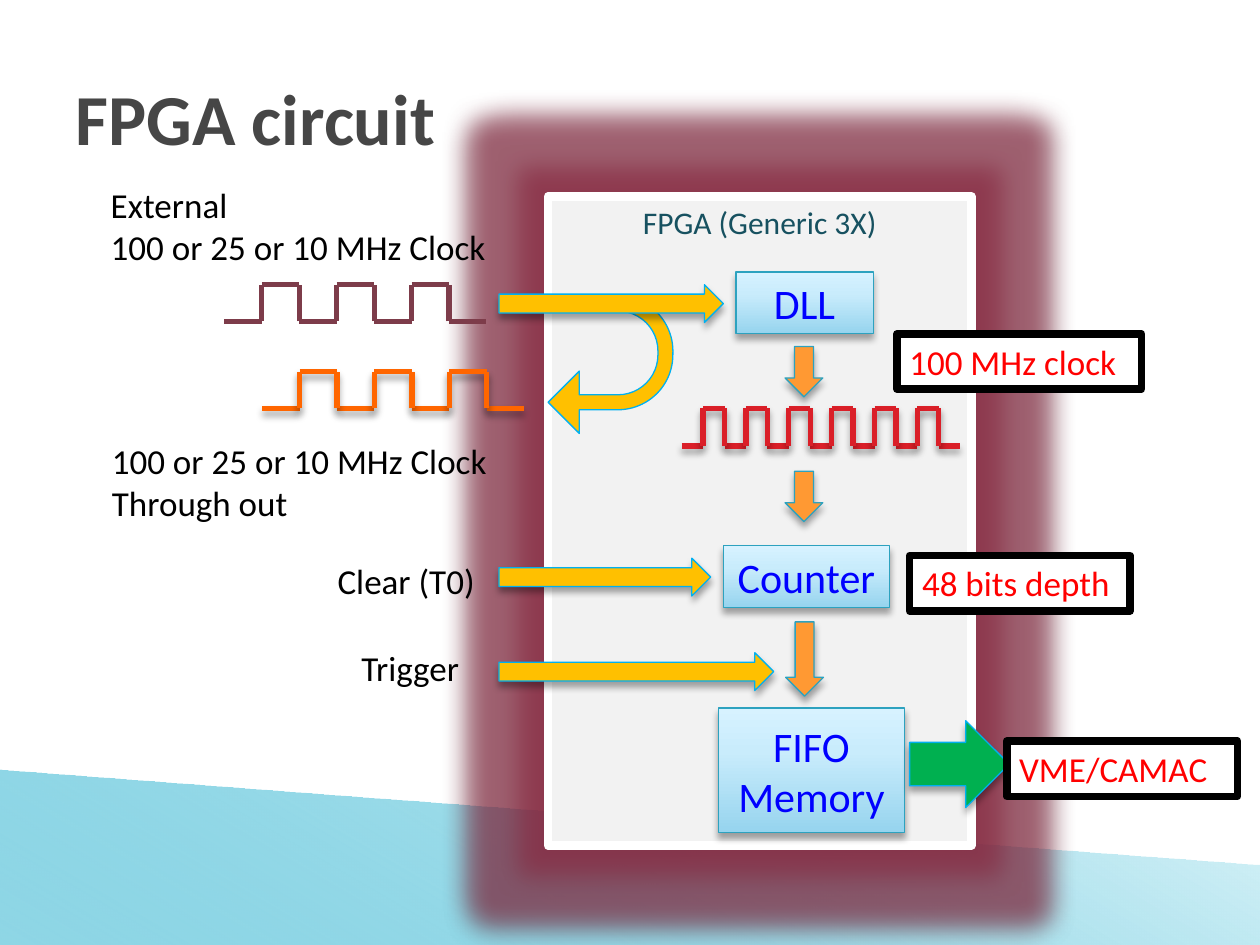
from lxml.etree import SubElement
from pptx import Presentation
from pptx.dml.color import RGBColor
from pptx.enum.shapes import MSO_CONNECTOR, MSO_SHAPE
from pptx.enum.text import MSO_ANCHOR, PP_ALIGN
from pptx.oxml import parse_xml
from pptx.oxml.ns import nsdecls, qn
from pptx.util import Pt

THEME = {
    "font": "Calibri",
    "title": "464646", "title_size": 41,
    "text": "000000", "label_size": 20,
    "block_text": "0000FF", "block_size": 24,
    "frame_text": "175160", "frame_size": 18,
    "frame": "F2F2F2", "white": "FFFFFF", "glow": "8A2A42",
    "note_text": "FF0000", "note_line": "000000",
    "block_line": "2DA2BF", "arrow_line": "00B0F0",
    "input": "FFC000", "flow": "FF9933", "output": "00B050",
    "wave_in": "7D3C4A", "wave_through": "FF6600", "wave_clock": "DA1F28",
    "block_stops": [(0, "96D4EE", 100), (65, "C9ECFC", 100), (100, "D7F2FF", 100)],
    "band_stops": [(0, "DEF5FA", 100), (100, "1FAECD", 50)],
}
SHADOW = (
    f'<a:outerShdw {nsdecls("a")} blurRad="50800" dist="38100" dir="5400000" rotWithShape="0">'
    '<a:srgbClr val="000000"><a:alpha val="35000"/></a:srgbClr></a:outerShdw>'
)
GLOW = (
    f'<a:glow {nsdecls("a")} rad="{Pt(29)}">'
    f'<a:srgbClr val="{THEME["glow"]}"><a:alpha val="65000"/></a:srgbClr></a:glow>'
)


def write_text(shape, text, size, color, bold=False, align=PP_ALIGN.LEFT, anchor=MSO_ANCHOR.TOP):
    frame = shape.text_frame
    frame.word_wrap = True
    frame.vertical_anchor = anchor
    frame.text = text
    for paragraph in frame.paragraphs:
        paragraph.alignment = align
        paragraph.font.name = THEME["font"]
        paragraph.font.size = Pt(size)
        paragraph.font.bold = bold
        paragraph.font.color.rgb = RGBColor.from_string(color)


def format_shape(shape, fill, line=None, width=0.75, angle=0, effects=()):
    if isinstance(fill, list):
        shape.fill.gradient()
        gradient = shape._element.spPr.find(qn("a:gradFill"))
        stops = "".join(
            f'<a:gs pos="{position * 1000}"><a:srgbClr val="{color}">'
            f'<a:alpha val="{alpha * 1000}"/></a:srgbClr></a:gs>'
            for position, color, alpha in fill
        )
        shape._element.spPr.replace(gradient, parse_xml(
            f'<a:gradFill {nsdecls("a")} rotWithShape="1"><a:gsLst>{stops}</a:gsLst>'
            f'<a:lin ang="{angle * 60000}" scaled="0"/></a:gradFill>'
        ))
    else:
        shape.fill.solid()
        shape.fill.fore_color.rgb = RGBColor.from_string(fill)
    if line:
        shape.line.color.rgb = RGBColor.from_string(line)
        shape.line.width = Pt(width)
    else:
        shape.line.fill.background()
    shape.shadow.inherit = False
    effect_list = shape._element.spPr.find(qn("a:effectLst"))
    for effect in effects:
        effect_list.append(parse_xml(effect))


presentation = Presentation()
presentation.slide_width = Pt(720)
presentation.slide_height = Pt(540)
slide = presentation.slides.add_slide(presentation.slide_layouts[5])
shapes = slide.shapes

title = shapes.title
title.left, title.top, title.width, title.height = Pt(36), Pt(21.6), Pt(648), Pt(90)
write_text(title, "FPGA circuit", THEME["title_size"], THEME["title"],
           bold=True, anchor=MSO_ANCHOR.MIDDLE)

builder = shapes.build_freeform(Pt(0), Pt(439.9))
builder.add_line_segments([(Pt(720), Pt(493.9)), (Pt(720), Pt(540)), (Pt(0), Pt(540))])
band = builder.convert_to_shape()
format_shape(band, THEME["band_stops"], angle=120)
shapes._spTree.remove(band._element)
shapes._spTree.insert(2, band._element)

fpga_frame = shapes.add_shape(MSO_SHAPE.RECTANGLE, Pt(313.2), Pt(112.3), Pt(241.9), Pt(370.8))
format_shape(fpga_frame, THEME["frame"], THEME["white"], 5, effects=(GLOW, SHADOW))
write_text(fpga_frame, "FPGA (Generic 3X)", THEME["frame_size"], THEME["frame_text"],
           align=PP_ALIGN.CENTER)

for text, left, top, width, height in [
    ("DLL", 420.5, 155.5, 78.5, 35.3),
    ("Counter", 413.3, 311.8, 95, 35.3),
    ("FIFO\nMemory", 410.4, 404.6, 106.6, 71.3),
]:
    block = shapes.add_shape(MSO_SHAPE.RECTANGLE, Pt(left), Pt(top), Pt(width), Pt(height))
    format_shape(block, THEME["block_stops"], THEME["block_line"], angle=270, effects=(SHADOW,))
    write_text(block, text, THEME["block_size"], THEME["block_text"],
               align=PP_ALIGN.CENTER, anchor=MSO_ANCHOR.MIDDLE)

through_arrow = shapes.add_shape(MSO_SHAPE.U_TURN_ARROW, Pt(309.6), Pt(172.8), Pt(78.5), Pt(71.3))
through_arrow.rotation = 90
for index, adjustment in enumerate([0.12, 0.25, 0.25, 0.44, 1]):
    through_arrow.adjustments[index] = adjustment
format_shape(through_arrow, THEME["input"], THEME["arrow_line"])

for left, top, width, height, rotation, fill, line in [
    (285.1, 162.7, 128.2, 21.6, 0, "input", "arrow_line"),
    (285.1, 373, 157, 21.6, 0, "input", "arrow_line"),
    (285.1, 319, 121, 21.6, 0, "input", "arrow_line"),
    (519.8, 411.8, 56.9, 49.7, 0, "output", "arrow_line"),
    (445, 201.6, 28.8, 21.6, 90, "flow", "block_line"),
    (445, 272.9, 28.8, 21.6, 90, "flow", "block_line"),
    (438.5, 365.8, 42.5, 21.6, 90, "flow", "block_line"),
]:
    arrow = shapes.add_shape(MSO_SHAPE.RIGHT_ARROW, Pt(left), Pt(top), Pt(width), Pt(height))
    arrow.rotation = rotation
    format_shape(arrow, THEME[fill], THEME[line], effects=(SHADOW,))

for left, low, high, step, count, color, shadowed in [
    (128.2, 183.6, 162.7, 21.4, 7, "wave_in", False),
    (149.8, 233.3, 212.4, 21.4, 7, "wave_through", True),
    (389.5, 254.9, 233.3, 12.25, 13, "wave_clock", True),
]:
    segments = []
    for index in range(count):
        start = left + index * step
        level = high if index % 2 else low
        segments.append((start, level, start + step, level))
        if index:
            segments.append((start, low, start, high))
    for segment in segments:
        edge = shapes.add_connector(MSO_CONNECTOR.STRAIGHT, *map(Pt, segment))
        edge.line.color.rgb = RGBColor.from_string(THEME[color])
        edge.line.width = Pt(3)
        effect_list = SubElement(edge._element.spPr, qn("a:effectLst"))
        if shadowed:
            effect_list.append(parse_xml(SHADOW))

for text, left, top, width in [
    ("100 MHz clock", 512.6, 190.8, 139.7),
    ("48 bits depth", 519.8, 317.5, 126),
    ("VME/CAMAC", 575.3, 423.4, 131.8),
]:
    note = shapes.add_shape(MSO_SHAPE.RECTANGLE, Pt(left), Pt(top), Pt(width), Pt(31.7))
    format_shape(note, THEME["white"], THEME["note_line"], 4.33)
    write_text(note, text, THEME["label_size"], THEME["note_text"])

for text, left, top, width, height in [
    ("External\n100 or 25 or 10 MHz Clock", 56.2, 101.5, 270.7, 60.5),
    ("100 or 25 or 10 MHz Clock\nThrough out", 56.9, 247.7, 263.5, 60.5),
    ("Clear (T0)", 185.8, 316.1, 107.3, 31.7),
    ("Trigger", 199.4, 365.8, 82.8, 31.7),
]:
    label = shapes.add_textbox(Pt(left), Pt(top), Pt(width), Pt(height))
    write_text(label, text, THEME["label_size"], THEME["text"])

presentation.save("out.pptx")
